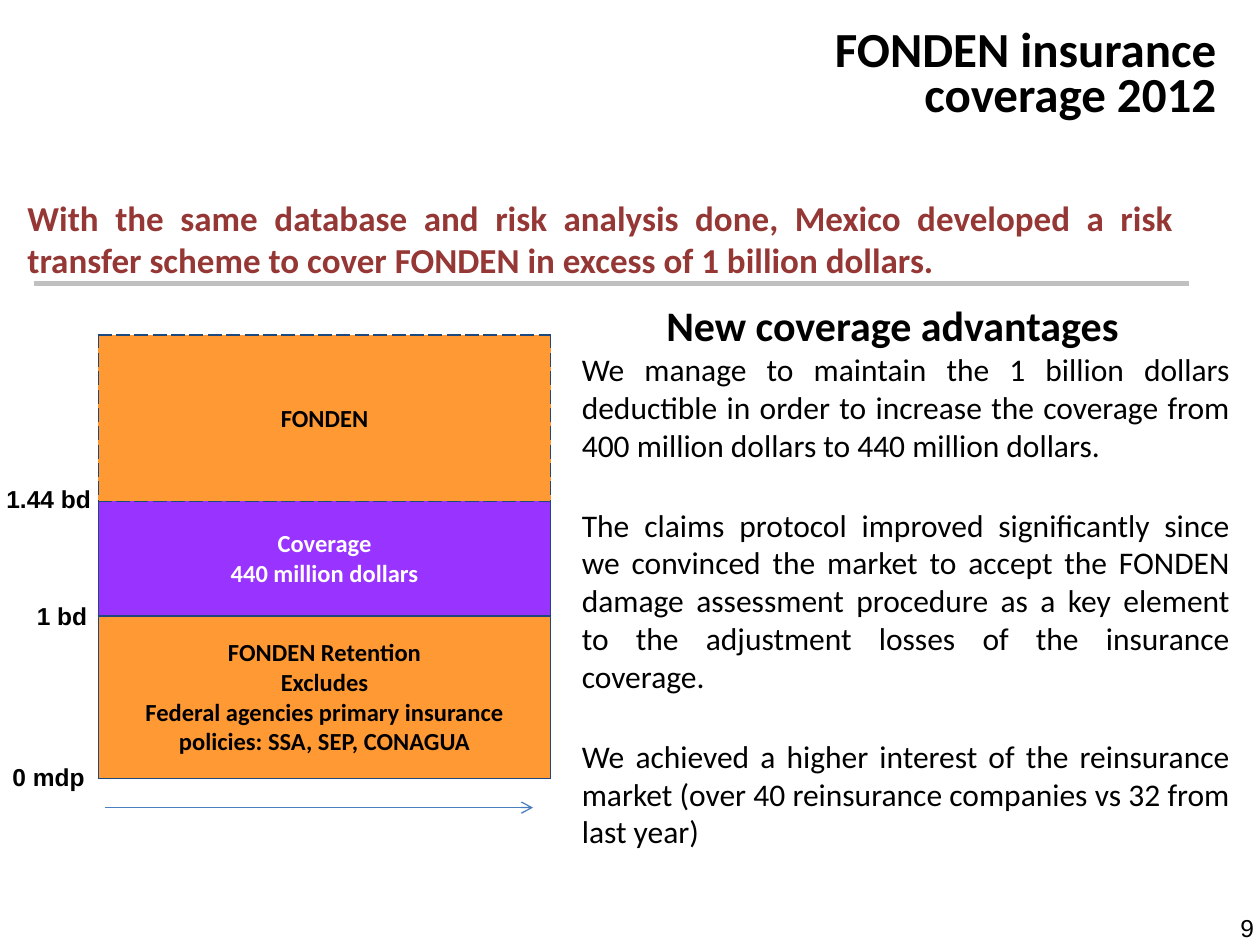
"""Build the FONDEN insurance coverage 2012 slide."""
from lxml.etree import SubElement
from pptx import Presentation
from pptx.dml.color import RGBColor
from pptx.enum.shapes import MSO_CONNECTOR
from pptx.enum.text import MSO_ANCHOR, PP_ALIGN as Align
from pptx.oxml.ns import qn
from pptx.util import Pt

COLORS = {
    "black": "000000", "white": "FFFFFF", "red": "953735", "gray": "C0C0C0",
    "navy": "1F497D", "blue": "4B7EBC", "orange": "FF9933", "purple": "9933FF",
}


def write(frame, lines, size, color="black", font="Calibri", bold=False,
          align=Align.LEFT, spacing=None, indent=0, before=0, after=0):
    frame.word_wrap = True
    for i, line in enumerate(lines):
        paragraph = frame.paragraphs[0] if i == 0 else frame.add_paragraph()
        paragraph.alignment = align
        paragraph.line_spacing = spacing
        paragraph.space_before = Pt(before if i else 0)
        paragraph.space_after = Pt(after)
        if indent:
            paragraph._p.get_or_add_pPr().set("marL", str(Pt(indent)))
        run = paragraph.add_run()
        run.text = line
        run.font.size, run.font.name, run.font.bold = Pt(size), font, bold
        run.font.color.rgb = RGBColor.from_string(COLORS[color])


def draw_line(left, right, y, color, width):
    connector = slide.shapes.add_connector(
        MSO_CONNECTOR.STRAIGHT, Pt(left), Pt(y), Pt(right), Pt(y))
    connector.line.color.rgb = RGBColor.from_string(COLORS[color])
    connector.line.width = Pt(width)
    SubElement(connector._element.spPr, qn("a:effectLst"))
    return connector


prs = Presentation()
prs.slide_width, prs.slide_height = Pt(720), Pt(540)
slide = prs.slides.add_slide(prs.slide_layouts[6])

draw_line(19.5, 679.7, 162, "gray", 3)

layers = [
    (21.6, "white", "black", [""], {"B": "dash"}),
    (95, "orange", "black", ["FONDEN"], dict.fromkeys("LRTB", "dash")),
    (65.5, "purple", "white", ["Coverage", "440 million dollars"],
     {"L": "solid", "R": "solid", "T": "dash", "B": "solid"}),
    (92.9, "orange", "black",
     ["FONDEN Retention", "Excludes", "Federal agencies primary insurance",
      "policies: SSA, SEP, CONAGUA"], dict.fromkeys("LRTB", "solid")),
]
scheme = slide.shapes.add_table(
    len(layers), 1, Pt(56.2), Pt(169.9), Pt(258.5),
    Pt(sum(layer[0] for layer in layers))).table
scheme.first_row = scheme.horz_banding = False
for i, (height, fill, ink, lines, borders) in enumerate(layers):
    scheme.rows[i].height = Pt(height)
    cell = scheme.cell(i, 0)
    cell.vertical_anchor = MSO_ANCHOR.MIDDLE
    cell.margin_left = cell.margin_right = cell.margin_top = Pt(0.7)
    cell.margin_bottom = Pt(0)
    write(cell.text_frame, lines, 14, ink, bold=True, align=Align.CENTER)
    for side in "LRTB":
        border = SubElement(cell._tc.get_or_add_tcPr(), qn(f"a:ln{side}"), w=str(Pt(1)))
        if side in borders:
            paint = SubElement(border, qn("a:solidFill"))
            SubElement(paint, qn("a:srgbClr"), val=COLORS["navy"])
            SubElement(border, qn("a:prstDash"), val=borders[side])
        else:
            SubElement(border, qn("a:noFill"))
    cell.fill.solid()
    cell.fill.fore_color.rgb = RGBColor.from_string(COLORS[fill])

arrow = draw_line(59.8, 304.6, 461.5, "blue", 0.75)
SubElement(arrow.line._get_or_add_ln(), qn("a:tailEnd"), type="arrow")

advantages = [
    "We manage to maintain the 1 billion dollars deductible in order to increase "
    "the coverage from 400 million dollars to 440 million dollars.",
    "The claims protocol improved significantly since we convinced the market to "
    "accept the FONDEN damage assessment procedure as a key element to the "
    "adjustment losses of the insurance coverage.",
    "We achieved a higher interest of the reinsurance market (over 40 reinsurance "
    "companies vs 32 from last year)",
]
summary = ("With the same database and risk analysis done, Mexico developed a risk "
           "transfer scheme to cover FONDEN in excess of 1 billion dollars.")
level = dict(size=14, font="Arial", bold=True, align=Align.RIGHT)
texts = [
    (555.8, 518.4, 167.8, 37.4, ["9"], dict(size=14, font="Arial", align=Align.RIGHT)),
    (-8.6, 272.9, 67.7, 24.5, ["1.44 bd"], level),
    (-15.8, 339.8, 72.7, 24.5, ["1 bd"], level),
    (-8.6, 432, 64.1, 24.5, ["0 mdp"], level),
    (373.7, 167.8, 326.2, 28.8, ["New coverage advantages"], dict(size=24, bold=True)),
    (297.4, 196.6, 412.6, 342, advantages,
     dict(size=18, align=Align.JUSTIFY, indent=28, before=18, after=6)),
    (367.2, 15.1, 334.8, 59, ["FONDEN insurance coverage 2012"],
     dict(size=28, bold=True, align=Align.RIGHT, spacing=0.75)),
    (8.6, 108.7, 668.9, 55.4, [summary],
     dict(size=20, color="red", bold=True, align=Align.JUSTIFY)),
]
for left, top, width, height, lines, style in texts:
    box = slide.shapes.add_textbox(Pt(left), Pt(top), Pt(width), Pt(height))
    write(box.text_frame, lines, **style)

prs.save("out.pptx")
